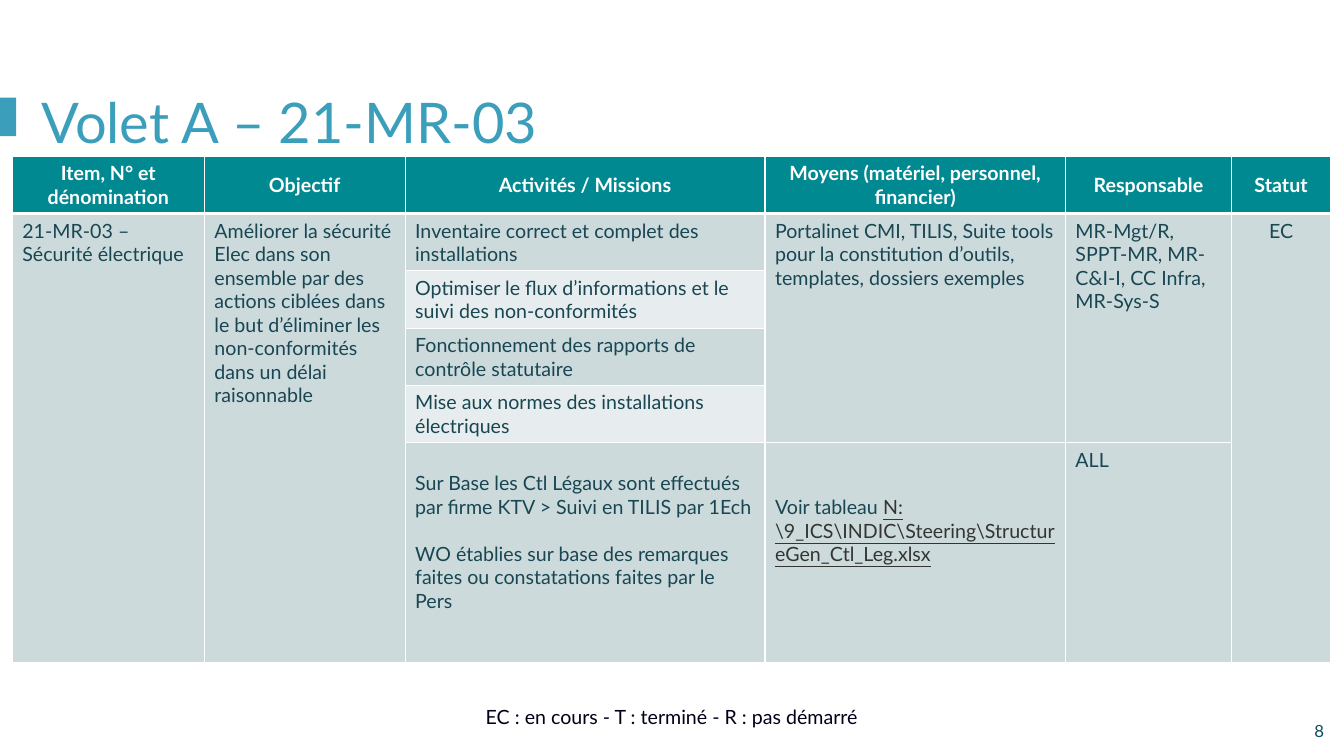
from dataclasses import dataclass

from lxml import etree
from pptx import Presentation
from pptx import util as u
from pptx.dml.color import RGBColor
from pptx.enum import shapes, text
from pptx.oxml import ns

HUES = {
    "sky": "3B9EBA", "teal": "008991", "white": "FFFFFF", "ink": "184652",
    "band": "CCDADC", "pale": "E7EDEE", "link": "343531",
    "note": "000018", "page": "0A4F5B",
}
LEFT, MID, RIGHT = text.PP_ALIGN.LEFT, text.PP_ALIGN.CENTER, text.PP_ALIGN.RIGHT
TOP, CORE, BASE = (text.MSO_ANCHOR.TOP, text.MSO_ANCHOR.MIDDLE,
                   text.MSO_ANCHOR.BOTTOM)


@dataclass
class Run:
    words: str
    hue: str = ""
    line: bool = False


@dataclass
class Cell:
    row: int
    col: int
    paras: list
    span: int = 1
    align: int = LEFT
    fill: str = "band"
    inset: float = 0.13  # top margin in cm


@dataclass
class Label:
    words: str
    box: tuple  # left, top, width, height in cm
    size: int
    hue: str
    align: int
    anchor: int


def tint(name: str) -> RGBColor:
    return RGBColor.from_string(HUES[name])


def write(frame, paras: list, *, size: int = 14, hue: str = "ink",
          bold: bool = False, align: int = LEFT, gap: float = 0) -> None:
    """Each paragraph is a string or a list of runs."""
    frame.word_wrap = True
    for i, item in enumerate(paras):
        para = frame.paragraphs[0] if i == 0 else frame.add_paragraph()
        para.alignment = align
        para.space_before = u.Pt(gap if i else 0)
        for part in [Run(item)] if isinstance(item, str) else item:
            run = para.add_run()
            run.text = part.words
            font = run.font
            font.name, font.size, font.bold = "Lato", u.Pt(size), bold
            font.underline = part.line
            font.color.rgb = tint(part.hue or hue)


def edge(cell, row: int) -> None:
    """White borders, thicker below the header row."""
    props = cell._tc.get_or_add_tcPr()
    for side in "LRTB":
        wide = (row, side) in ((0, "B"), (1, "T"))
        line = etree.SubElement(props, ns.qn(f"a:ln{side}"),
                                w=str(u.Pt(3 if wide else 1)))
        fill = etree.SubElement(line, ns.qn("a:solidFill"))
        etree.SubElement(fill, ns.qn("a:srgbClr"), val=HUES["white"])


def label(slide, item: Label) -> None:
    box = slide.shapes.add_textbox(*map(u.Cm, item.box))
    box.text_frame.vertical_anchor = item.anchor
    write(box.text_frame, [item.words], size=item.size, hue=item.hue,
          align=item.align)


HEADS = ["Item, N° et dénomination", "Objectif", "Activités / Missions",
         "Moyens (matériel, personnel, financier)", "Responsable", "Statut"]
TASKS = ["Inventaire correct et complet des installations",
         "Optimiser le flux d’informations et le suivi des non-conformités",
         "Fonctionnement des rapports de contrôle statutaire",
         "Mise aux normes des installations électriques"]
WIDTHS = [4.84, 5.06, 9.07, 7.57, 4.19, 2.49]
HIGHS = [1.43] * 5 + [5.53]

CELLS = [
    Cell(1, 0, ["21-MR-03 – Sécurité électrique"], span=5),
    Cell(1, 1, ["Améliorer la sécurité Elec dans son ensemble par des actions "
                "ciblées dans le but d’éliminer les non-conformités dans un "
                "délai raisonnable"], span=5),
    *(Cell(i, 2, [task], fill="band" if i % 2 else "pale")
      for i, task in enumerate(TASKS, 1)),
    Cell(5, 2, ["Sur Base les Ctl Légaux sont effectués par firme KTV > Suivi "
                "en TILIS par 1Ech",
                "WO établies sur base des remarques faites ou constatations "
                "faites par le Pers"], inset=0.72),
    Cell(1, 3, ["Portalinet CMI, TILIS, Suite tools pour la constitution "
                "d’outils, templates, dossiers exemples"], span=4),
    Cell(5, 3, [[Run("Voir tableau "),
                 Run(r"N:\9_ICS\INDIC\Steering\StructureGen_Ctl_Leg.xlsx",
                     "link", True)]], inset=1.32),
    Cell(1, 4, ["MR-Mgt/R, SPPT-MR, MR-C&I-I, CC Infra, MR-Sys-S"], span=4),
    Cell(5, 4, ["ALL"]),
    Cell(1, 5, ["EC"], span=5, align=MID),
]
LABELS = [
    Label("8", (26, 17.91, 7.62, 1.02), 12, "page", RIGHT, CORE),
    Label("EC : en cours - T : terminé - R : pas démarré",
          (0, 17.5, 33.87, 0.99), 14, "note", MID, BASE),
]


def grid(slide) -> None:
    table = slide.shapes.add_table(
        len(HIGHS), len(WIDTHS), u.Cm(0.31), u.Cm(3.94),
        u.Cm(sum(WIDTHS)), u.Cm(sum(HIGHS))).table
    table.horz_banding = False
    for col, wide in zip(table.columns, WIDTHS):
        col.width = u.Cm(wide)
    for i, (row, high) in enumerate(zip(table.rows, HIGHS)):
        row.height = u.Cm(high)
        for cell in row.cells:
            edge(cell, i)
            cell.fill.solid()
            cell.fill.fore_color.rgb = tint("band" if i else "teal")

    # Header row
    for i, head in enumerate(HEADS):
        cell = table.cell(0, i)
        cell.vertical_anchor = CORE
        write(cell.text_frame, [head], hue="white", bold=True, align=MID)

    # Body cells
    for item in CELLS:
        cell = table.cell(item.row, item.col)
        if item.span > 1:
            cell.merge(table.cell(item.row + item.span - 1, item.col))
        cell.fill.fore_color.rgb = tint(item.fill)
        cell.vertical_anchor = TOP
        cell.margin_top = u.Cm(item.inset)
        write(cell.text_frame, item.paras, align=item.align, gap=16.8)


def main() -> None:
    deck = Presentation()
    deck.slide_width, deck.slide_height = u.Cm(33.87), u.Cm(19.05)
    slide = deck.slides.add_slide(deck.slide_layouts[5])

    # Accent bar
    bar = slide.shapes.add_shape(shapes.MSO_SHAPE.RECTANGLE, 0, u.Cm(2.46),
                                 u.Cm(0.41), u.Cm(0.97))
    bar.shadow.inherit = False
    bar.fill.solid()
    bar.fill.fore_color.rgb = tint("sky")
    bar.line.fill.background()

    # Title
    title = slide.shapes.title
    title.left, title.top = u.Cm(0.79), u.Cm(2.08)
    title.width, title.height = u.Cm(31.01), u.Cm(1.96)
    title.text_frame.vertical_anchor = TOP
    title.text_frame.auto_size = text.MSO_AUTO_SIZE.NONE
    write(title.text_frame, ["Volet A – 21-MR-03"], size=40, hue="sky")

    # Table, legend and page number
    grid(slide)
    for item in LABELS:
        label(slide, item)
    deck.save("out.pptx")


if __name__ == "__main__":
    main()
